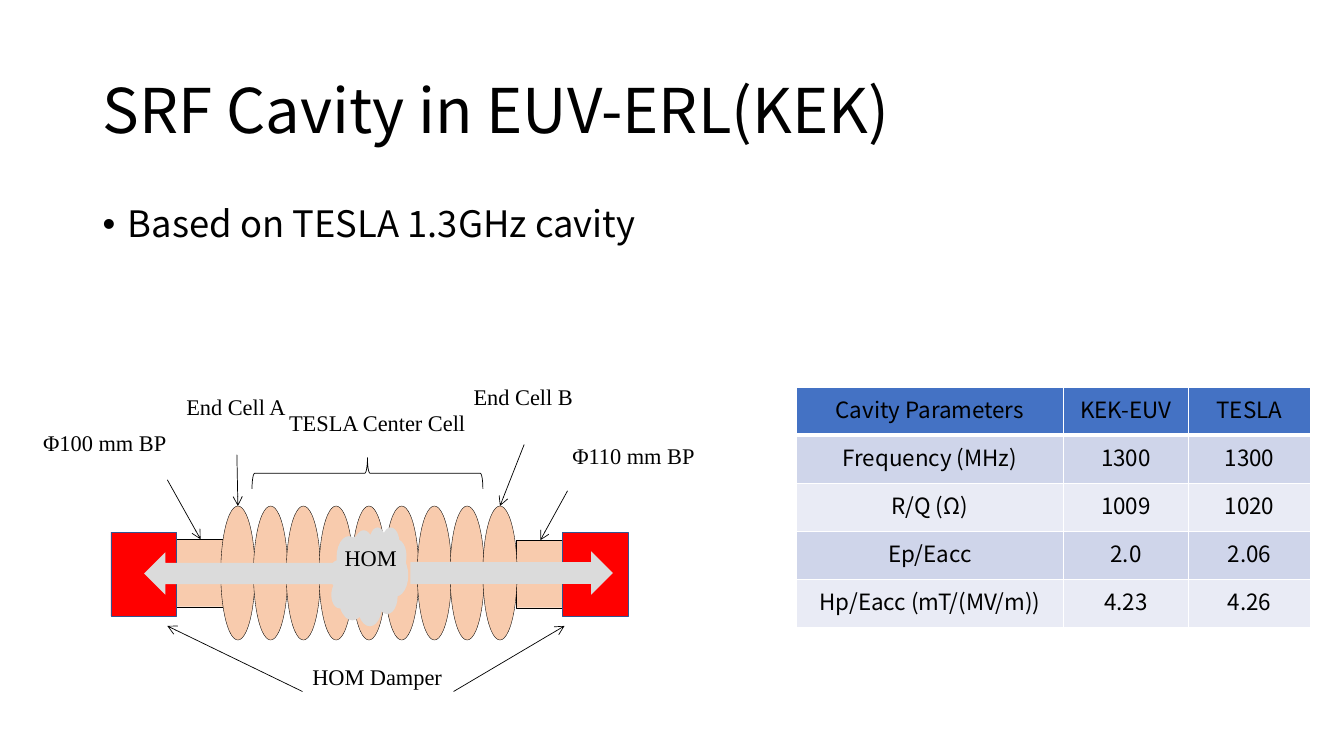
from collections import namedtuple

from lxml import etree
from pptx import Presentation
from pptx import util as u
from pptx.dml.color import RGBColor
from pptx.enum import shapes, text
from pptx.oxml import ns

Joint = namedtuple("Joint", "shape side")
TOP, LEFT, BOTTOM, RIGHT = range(4)
Kind = shapes.MSO_SHAPE

COPPER, RED, SILVER = "F8CBAD", "FF0000", "DBDBDB"
HEADER, BANDS = "4472C4", ("CFD5EA", "E9EBF5")
PARAMETERS = [
    ("Cavity Parameters", "KEK-EUV", "TESLA"),
    ("Frequency (MHz)", "1300", "1300"),
    ("R/Q (Ω)", "1009", "1020"),
    ("Ep/Eacc", "2.0", "2.06"),
    ("Hp/Eacc (mT/(MV/m))", "4.23", "4.26"),
]


def grid(count):
    """Length of a number of grid columns or rows, ten to the inch."""
    return u.Inches(count / 10)


def color(value):
    return RGBColor.from_string(value)


def add_xml(parent, tag, **attributes):
    return etree.SubElement(parent, ns.qn(tag), attributes)


class Page:
    heading_font = "Noto Sans CJK KR"
    table_font = "Noto Sans CJK JP"
    label_font = "Times New Roman"
    ink = "000000"

    def __init__(self, deck):
        self.shapes = deck.slides.add_slide(deck.slide_layouts[6]).shapes

    def style(self, para, size, font):
        para.font.size = u.Pt(size)
        para.font.name = font
        para.font.color.rgb = color(self.ink)

    def text(self, words, area, size, font, wrap=True, middle=False, spacing=1.0, bullet=False):
        box = self.shapes.add_textbox(*map(grid, area))
        frame = box.text_frame
        frame.word_wrap = wrap
        frame.vertical_anchor = text.MSO_ANCHOR.MIDDLE if middle else text.MSO_ANCHOR.TOP
        para = frame.paragraphs[0]
        para.text = words
        para.line_spacing = spacing
        if bullet:
            properties = para._p.get_or_add_pPr()
            indent = grid(2.5)
            properties.set("marL", str(indent))
            properties.set("indent", str(-indent))
            add_xml(properties, "a:buFont", typeface="Arial")
            add_xml(properties, "a:buChar", char="•")
        self.style(para, size, font)
        return box

    def label(self, words, left, top, width):
        return self.text(words, (left, top, width, 6.6), 16, self.label_font, wrap=False)

    def shape(self, kind, area, fill=None, line=None, weight=0.25):
        shape = self.shapes.add_shape(kind, *map(grid, area))
        shape.shadow.inherit = False
        if fill:
            shape.fill.solid()
            shape.fill.fore_color.rgb = color(fill)
        else:
            shape.fill.background()
        if line:
            shape.line.color.rgb = color(line)
            shape.line.width = u.Pt(weight)
        else:
            shape.line.fill.background()
        return shape

    def arrow(self, start, end):
        """Draw an arrow; each end is a grid point or a Joint."""
        points = [(0, 0) if isinstance(tip, Joint) else tip for tip in (start, end)]
        line = self.shapes.add_connector(
            shapes.MSO_CONNECTOR.STRAIGHT, *(grid(value) for point in points for value in point))
        if isinstance(start, Joint):
            line.begin_connect(*start)
        if isinstance(end, Joint):
            line.end_connect(*end)
        line.line.color.rgb = color(self.ink)
        line.line.width = u.Pt(0.5)
        add_xml(line.line._get_or_add_ln(), "a:tailEnd", type="arrow")
        add_xml(line._element.spPr, "a:effectLst")

    def border(self, cell, side, points):
        line = add_xml(cell._tc.get_or_add_tcPr(), f"a:ln{side}", w=str(u.Pt(points)))
        add_xml(add_xml(line, "a:solidFill"), "a:srgbClr", val="FFFFFF")

    def table(self, rows, left, top, widths, height):
        area = left, top, sum(widths), height * len(rows)
        table = self.shapes.add_table(len(rows), len(widths), *map(grid, area)).table
        for column, width in zip(table.columns, widths):
            column.width = grid(width)
        for row, values in enumerate(rows):
            table.rows[row].height = grid(height)
            for column, value in enumerate(values):
                cell = table.cell(row, column)
                cell.margin_left = cell.margin_right = grid(0.5)
                cell.margin_top = cell.margin_bottom = grid(0.5)
                para = cell.text_frame.paragraphs[0]
                para.text = value
                para.alignment = text.PP_ALIGN.CENTER
                self.style(para, 16, self.table_font)
                for side in "LRTB":
                    heavy = (row, side) in ((0, "B"), (1, "T"))
                    self.border(cell, side, 3 if heavy else 1)
                cell.fill.solid()
                cell.fill.fore_color.rgb = color(BANDS[(row - 1) % 2] if row else HEADER)


def draw_cavity(page):
    pipe_b = page.shape(Kind.RECTANGLE, (51.2, 53.6, 4.8, 6.7), COPPER, page.ink)
    pipe_a = page.shape(Kind.RECTANGLE, (17.5, 53.5, 4.8, 6.7), COPPER, page.ink)
    cells = [page.shape(Kind.OVAL, (21.9 + 3.25 * index, 50.2, 3.4, 13.3), COPPER, page.ink)
             for index in range(9)]
    brace = page.shape(Kind.LEFT_BRACE, (34.9, 35.5, 3.1, 22.9), line=page.ink, weight=0.5)
    brace.rotation = 90

    page.label("TESLA Center Cell", 27.7, 40.1, 19.7)
    end_a = page.label("End Cell A", 17.5, 38.5, 12)
    end_b = page.label("End Cell B", 46, 37.5, 12)
    page.arrow(Joint(end_a, BOTTOM), Joint(cells[0], TOP))
    page.arrow(Joint(end_b, BOTTOM), Joint(cells[-1], TOP))

    for left in (11, 55.8):
        page.shape(Kind.RECTANGLE, (left, 52.8, 6.5, 8.3), RED, "325491")
    damper = page.label("HOM Damper", 30, 65.3, 15)
    page.arrow(Joint(damper, LEFT), (16.6, 62.1))
    page.arrow(Joint(damper, RIGHT), (56, 62.1))

    cloud = page.shape(Kind.CLOUD_CALLOUT, (32.7, 52.3, 7.8, 9.8), SILVER)
    cloud.adjustments[0], cloud.adjustments[1] = -0.03, -0.07
    page.shape(Kind.RIGHT_ARROW, (40.7, 54.7, 20.1, 4.3), SILVER)
    page.shape(Kind.LEFT_ARROW, (14.3, 54.8, 18.9, 4.2), SILVER)
    page.label("HOM", 33.2, 53.5, 9.7)

    page.label("Φ100 mm BP", 3.3, 42.1, 14.4)
    page.label("Φ110 mm BP", 55.8, 43.4, 14.3)
    page.arrow((56.3, 48.7), Joint(pipe_b, TOP))
    page.arrow((16.6, 47.6), Joint(pipe_a, TOP))


def main():
    deck = Presentation()
    deck.slide_width, deck.slide_height = grid(133.33), grid(75)
    page = Page(deck)
    page.text("SRF Cavity in EUV-ERL(KEK)", (9.2, 4, 115, 14.5), 44, page.heading_font,
              middle=True, spacing=0.9)
    page.text("Based on TESLA 1.3GHz cavity", (9.2, 20, 115, 47.6), 26, page.heading_font,
              spacing=0.9, bullet=True)
    page.table(PARAMETERS, 79, 38.4, (26.5, 12.4, 12.1), 4.78)
    draw_cavity(page)
    deck.save("out.pptx")


if __name__ == "__main__":
    main()
